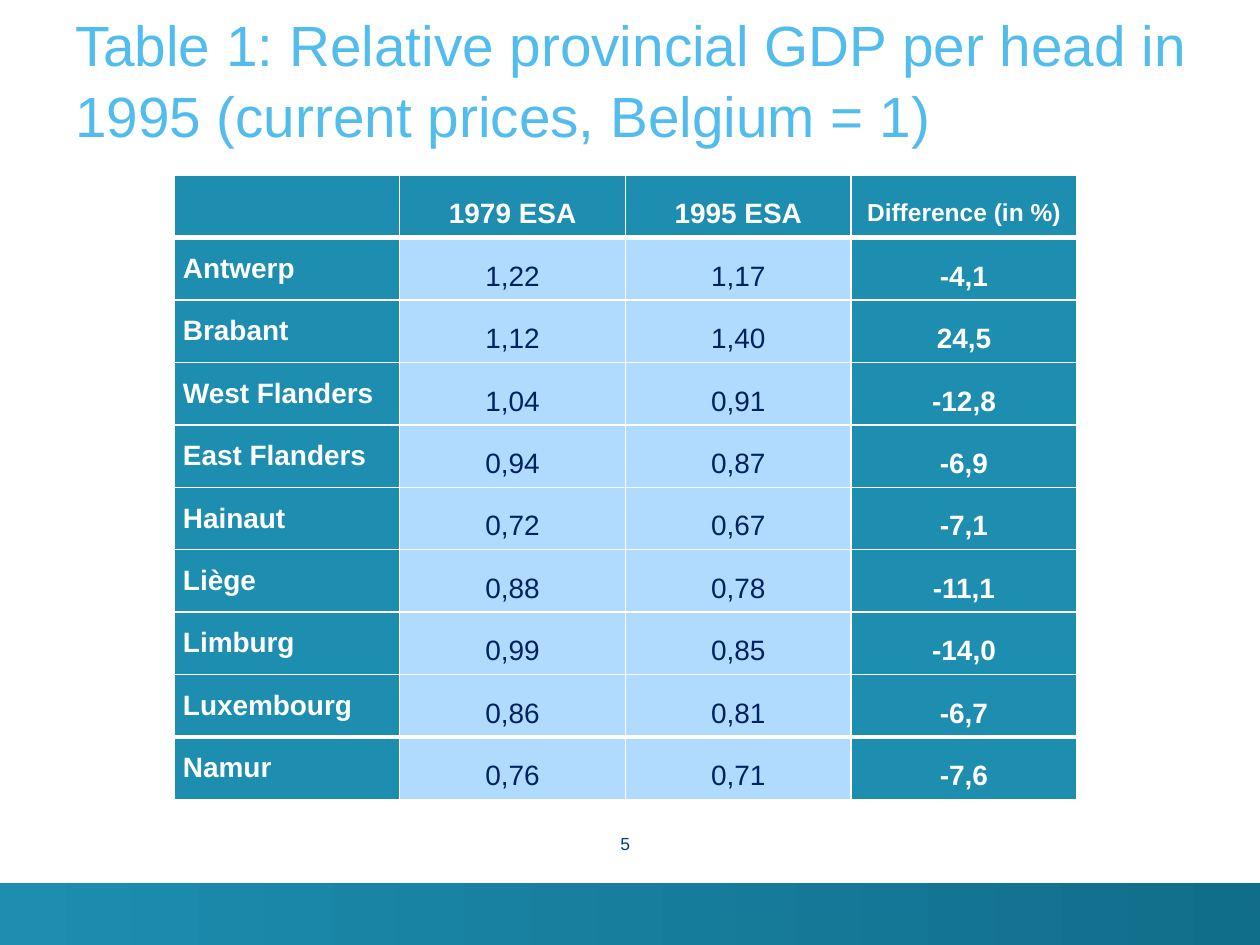
from lxml import etree
from pptx import Presentation
from pptx.dml.color import RGBColor
from pptx.enum.shapes import MSO_SHAPE
from pptx.enum.text import MSO_ANCHOR, MSO_AUTO_SIZE, PP_ALIGN
from pptx.oxml.ns import qn
from pptx.util import Emu, Pt

RECT = MSO_SHAPE.RECTANGLE
TOP, MID, LOW = MSO_ANCHOR.TOP, MSO_ANCHOR.MIDDLE, MSO_ANCHOR.BOTTOM
LEFT, MIDDLE, RIGHT, JUST = PP_ALIGN.LEFT, PP_ALIGN.CENTER, PP_ALIGN.RIGHT, PP_ALIGN.JUSTIFY
NO_FIT = MSO_AUTO_SIZE.NONE

TEAL, DEEP, PALE = "1D8DB0", "116E8A", "B1DAFF"
SKY, NAVY, BLUE, WHITE = "52BDEC", "002060", "00407A", "FFFFFF"

HEAD = ["", "1979 ESA", "1995 ESA", "Difference (in %)"]
ROWS = [
    ["Antwerp", "1,22", "1,17", "-4,1"],
    ["Brabant", "1,12", "1,40", "24,5"],
    ["West Flanders", "1,04", "0,91", "-12,8"],
    ["East Flanders", "0,94", "0,87", "-6,9"],
    ["Hainaut", "0,72", "0,67", "-7,1"],
    ["Liège", "0,88", "0,78", "-11,1"],
    ["Limburg", "0,99", "0,85", "-14,0"],
    ["Luxembourg", "0,86", "0,81", "-6,7"],
    ["Namur", "0,76", "0,71", "-7,6"],
]


def px(num):
    return Emu(round(num * 914400 / 126))


def rgb(code):
    return RGBColor.from_string(code)


def write(frame, text, size=16, color=WHITE, bold=False, align=LEFT, space=1.0):
    para = frame.paragraphs[0]
    para.text = text
    para.alignment = align
    para.line_spacing = space
    for font in [para.font] + [run.font for run in para.runs]:
        font.name = "Arial"
        font.size = Pt(size)
        font.bold = bold
        font.color.rgb = rgb(color)


def edge(cell, side, width):
    props = cell._tc.get_or_add_tcPr()
    line = etree.SubElement(props, qn("a:ln" + side), w=str(Pt(width)))
    fill = etree.SubElement(line, qn("a:solidFill"))
    etree.SubElement(fill, qn("a:srgbClr"), val=WHITE)


class Page:
    def __init__(self, deck):
        self.slide = deck.slides.add_slide(deck.slide_layouts[5])

    def band(self, x, y, w, h):
        bar = self.slide.shapes.add_shape(RECT, px(x), px(y), px(w), px(h))
        bar.shadow.inherit = False
        bar.line.fill.background()
        bar.fill.gradient()
        bar.fill.gradient_angle = 0
        for stop, color in zip(bar.fill.gradient_stops, (TEAL, DEEP)):
            stop.color.rgb = rgb(color)

    def frame(self, shape, anchor):
        frame = shape.text_frame
        frame.word_wrap = True
        frame.auto_size = NO_FIT
        frame.vertical_anchor = anchor
        frame.margin_left = frame.margin_right = 0
        frame.margin_top = frame.margin_bottom = 0
        return frame

    def title(self, text, x, y, w, h):
        shape = self.slide.shapes.title
        shape.left, shape.top, shape.width, shape.height = map(px, (x, y, w, h))
        write(self.frame(shape, LOW), text, size=32.4, color=SKY, space=1.04)

    def label(self, text, x, y, w, h, **style):
        box = self.slide.shapes.add_textbox(px(x), px(y), px(w), px(h))
        write(self.frame(box, TOP), text, **style)

    def table(self, data, x, y, w, h):
        last = len(data) - 1
        grid = self.slide.shapes.add_table(
            len(data), len(data[0]), px(x), px(y), px(w), px(h)).table
        grid.first_row = grid.horz_banding = False
        thick = (1, last)  # heavy rules above these rows
        for r, row in enumerate(data):
            for c, text in enumerate(row):
                cell = grid.cell(r, c)
                name = r > 0 and c == 0
                value = r > 0 and c in (1, 2)
                cell.margin_left = cell.margin_right = px(9)
                cell.margin_top = cell.margin_bottom = 0
                cell.vertical_anchor = TOP if name else MID
                # Borders come before the fill
                edge(cell, "L", 1)
                edge(cell, "R", 1)
                edge(cell, "T", 3 if r in thick else 1)
                edge(cell, "B", 3 if r + 1 in thick else 1)
                cell.fill.solid()
                cell.fill.fore_color.rgb = rgb(PALE if value else TEAL)
                write(cell.text_frame, text,
                      size=14 if (r, c) == (0, 3) else 16,
                      color=NAVY if value else WHITE, bold=not value,
                      align=JUST if name else MIDDLE, space=1.5)


def main():
    deck = Presentation()
    deck.slide_width, deck.slide_height = px(1260), px(945)
    page = Page(deck)
    # Footer band
    page.band(0, 883, 1260, 67)
    # Title and table
    page.title("Table 1: Relative provincial GDP per head in 1995 "
               "(current prices, Belgium = 1)", 75, 25, 1148, 124)
    page.table([HEAD] + ROWS, 174, 175, 903, 625)
    # Page number
    page.label("5", 501, 833, 129, 39, size=10, color=BLUE, align=RIGHT)
    deck.save("out.pptx")


if __name__ == "__main__":
    main()
